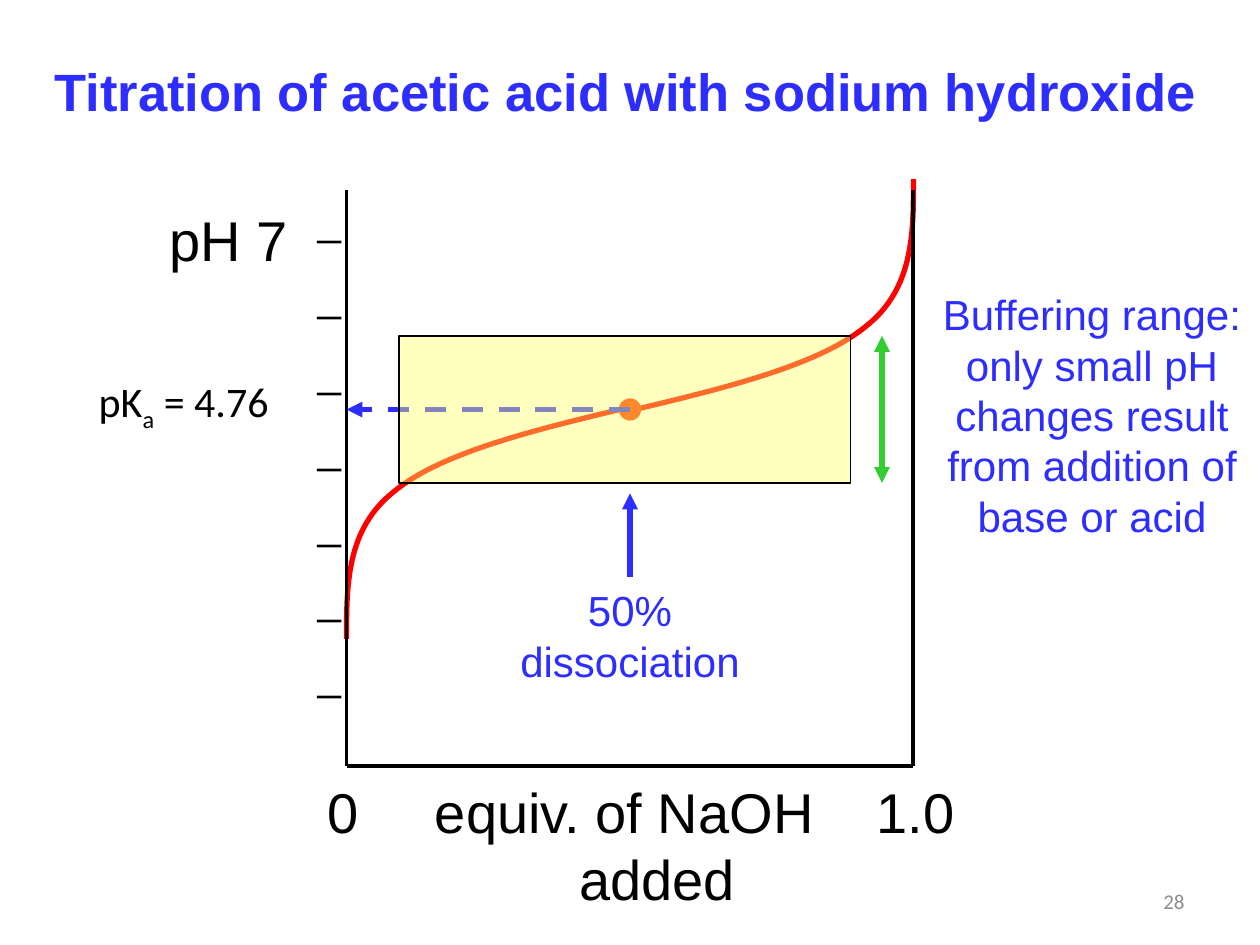
"""Draw the titration curve of acetic acid with sodium hydroxide."""
from dataclasses import dataclass

from lxml import etree
from pptx import Presentation
from pptx.dml.color import RGBColor
from pptx.enum import dml, shapes, text
from pptx.oxml import ns
from pptx.util import Pt

BLUE, BLACK, RED, GREEN = "2D2DFF", "000000", "FF0000", "33CC33"
LEFT, RIGHT, TOP, BASE = 198, 521.7, 108.6, 437.6
MID, HALF = 360, 233.65
ALIGN = text.PP_ALIGN
ANCHOR = text.MSO_ANCHOR


@dataclass
class Label:
    box: tuple
    paras: list
    size: float
    color: str = BLACK
    font: str = "Arial"
    align: ALIGN = ALIGN.LEFT
    anchor: ANCHOR = ANCHOR.TOP
    bold: bool = False
    wrap: bool = True


@dataclass
class Line:
    start: tuple
    end: tuple
    color: str = BLACK
    width: float = 2.25
    heads: tuple = ()
    dash: bool = False


TITLE = Label((24, 30, 668, 43), [["Titration of acetic acid with sodium hydroxide"]],
              30, BLUE, anchor=ANCHOR.MIDDLE, bold=True, wrap=False)
CENTER = dict(align=ALIGN.CENTER, anchor=ANCHOR.MIDDLE)
PH = Label((90, 114, 114, 45), [["pH 7"]], 32)
TICKS = Label((174.4, 114, 66, 289), [["_"]] * 7, 24)
AXIS = Label((180, 440.5, 396, 84), [["0\tequiv. of NaOH\t1.0"], ["added"]], 32)
PKA = Label((30, 204, 150, 54), [["pK", "a", " = 4.76"]], 24, font="Calibri", **CENTER)
NOTES = [
    PKA,
    Label((528, 210, 192, 54), [["Buffering range: only small pH changes result "
                                 "from addition of base or acid"]], 24, BLUE, **CENTER),
    Label((264, 336, 192, 54), [["50% dissociation"]], 24, BLUE, **CENTER),
    Label((516, 500.4, 168, 29), [["28"]], 12, "8C8C8C", "Calibri",
          ALIGN.RIGHT, ANCHOR.MIDDLE),
]
AXES = [Line((RIGHT, BASE), (LEFT, BASE)), Line((LEFT, TOP), (LEFT, BASE)),
        Line((RIGHT, BASE), (RIGHT, TOP))]
PKLINE = Line((MID, 234), (LEFT, 234), BLUE, 3, ("tailEnd",), True)
ARROWS = [Line((504, 192), (504, 276), GREEN, 3, ("headEnd", "tailEnd")),
          Line((MID, 282), (MID, 330), BLUE, 3, ("headEnd",))]
CURVE = [(198, 365), (198, 334), (198, 302.4), (225, 281),
         (252, 258.5), (306, 245.5), (360, 232.6)]


def paint(target, color: str) -> None:
    """Set a colour from a hex string."""
    target.rgb = RGBColor.from_string(color)


def fill(item, label: Label) -> list:
    """Place and format a text shape and return its paragraphs."""
    item.left, item.top, item.width, item.height = map(Pt, label.box)
    frame = item.text_frame
    frame.auto_size = text.MSO_AUTO_SIZE.NONE
    frame.word_wrap = label.wrap
    frame.vertical_anchor = label.anchor
    for i, runs in enumerate(label.paras):
        para = frame.add_paragraph() if i else frame.paragraphs[0]
        para.alignment = label.align
        for words in runs:
            run = para.add_run()
            run.text = words
            run.font.name, run.font.size = label.font, Pt(label.size)
            run.font.bold = label.bold
            paint(run.font.color, label.color)
    return list(frame.paragraphs)


def write(page, label: Label) -> list:
    """Add a text box and return its paragraphs."""
    return fill(page.add_textbox(*map(Pt, label.box)), label)


def draw(page, line: Line) -> None:
    """Add a straight line with its arrowheads."""
    link = page.add_connector(shapes.MSO_CONNECTOR.STRAIGHT,
                              *map(Pt, line.start + line.end))
    link.line.width = Pt(line.width)
    paint(link.line.color, line.color)
    if line.dash:
        link.line.dash_style = dml.MSO_LINE.DASH
    for end in line.heads:
        etree.SubElement(link.line._get_or_add_ln(), ns.qn("a:" + end), type="triangle")
    etree.SubElement(link._element.spPr, ns.qn("a:effectLst"))


def solid(page, kind, box: tuple, color: str, edge: str):
    """Add a filled preset shape with a thin edge."""
    item = page.add_shape(kind, *map(Pt, box))
    item.shadow.inherit = False
    item.fill.solid()
    paint(item.fill.fore_color, color)
    paint(item.line.color, edge)
    item.line.width = Pt(0.75)
    return item


def trace(page, knots: list) -> None:
    """Add an open red curve of cubic arcs with the given control points."""
    pts = [(Pt(x), Pt(y)) for x, y in knots]
    pen = page.build_freeform(*pts[0])
    pen.add_line_segments(pts[1:], close=False)
    curve = pen.convert_to_shape()
    curve.shadow.inherit = False
    curve.fill.background()
    paint(curve.line.color, RED)
    curve.line.width = Pt(3)
    route = curve._element.spPr.find(".//" + ns.qn("a:path"))
    steps = route.findall(ns.qn("a:lnTo"))
    for i in range(0, len(steps), 3):
        arc = etree.SubElement(route, ns.qn("a:cubicBezTo"))
        for step in steps[i:i + 3]:
            arc.append(step[0])
            route.remove(step)


def main() -> None:
    """Build and save the slide."""
    deck = Presentation()
    deck.slide_width, deck.slide_height = Pt(720), Pt(540)
    page = deck.slides.add_slide(deck.slide_layouts[5]).shapes
    fill(page.title, TITLE)

    trace(page, CURVE)
    trace(page, [(2 * MID - x, 2 * HALF - y) for x, y in CURVE])

    write(page, PH)
    for i, para in enumerate(write(page, TICKS)):
        para.line_spacing = 0.75
        para.space_before = Pt(21.7 if i else 0)
    for line in AXES:
        draw(page, line)
    scale, added = write(page, AXIS)
    tabs = etree.SubElement(scale._p.get_or_add_pPr(), ns.qn("a:tabLst"))
    for stop in (61.5, 313.8):
        etree.SubElement(tabs, ns.qn("a:tab"), pos=str(Pt(stop)), algn="l")
    added._p.get_or_add_pPr().set("marL", str(Pt(144)))

    solid(page, shapes.MSO_SHAPE.OVAL, (354, 228, 12, 12), "FF3300", "FF3300")
    draw(page, PKLINE)
    zone = solid(page, shapes.MSO_SHAPE.RECTANGLE, (228, 192, 258, 84), "FFFF66", BLACK)
    tint = zone._element.spPr.find(".//" + ns.qn("a:srgbClr"))
    etree.SubElement(tint, ns.qn("a:alpha"), val="42000")
    for line in ARROWS:
        draw(page, line)
    for note in NOTES:
        paras = write(page, note)
        if note is PKA:
            paras[0].runs[1]._r.get_or_add_rPr().set("baseline", "-25000")
    deck.save("out.pptx")


if __name__ == "__main__":
    main()
